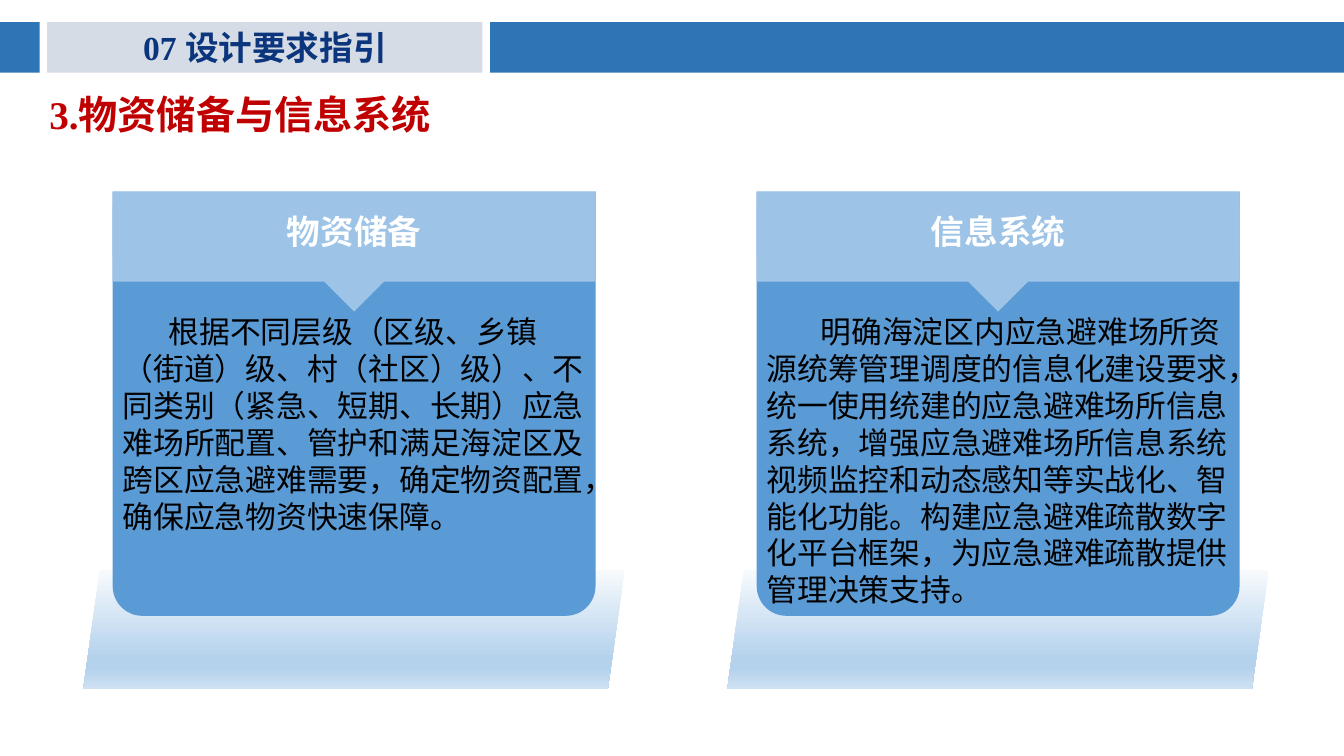
from lxml import etree
from pptx import Presentation
from pptx.dml.color import RGBColor
from pptx.enum.lang import MSO_LANGUAGE_ID
from pptx.enum.shapes import MSO_SHAPE
from pptx.enum.text import MSO_ANCHOR, MSO_AUTO_SIZE, PP_ALIGN
from pptx.oxml.ns import qn
from pptx.util import Cm, Pt

RECTANGLE = MSO_SHAPE.RECTANGLE
PARALLELOGRAM = MSO_SHAPE.PARALLELOGRAM
ROUNDED_TOP = MSO_SHAPE.ROUND_2_SAME_RECTANGLE
CALLOUT = MSO_SHAPE.DOWN_ARROW_CALLOUT
TOP, MIDDLE = MSO_ANCHOR.TOP, MSO_ANCHOR.MIDDLE
LEFT, CENTER, JUSTIFY = PP_ALIGN.LEFT, PP_ALIGN.CENTER, PP_ALIGN.JUSTIFY
NO_AUTOFIT = MSO_AUTO_SIZE.NONE
CHINESE = MSO_LANGUAGE_ID.SIMPLIFIED_CHINESE

FONT = "Times New Roman"
BAND, TAG, TAG_TEXT, HEADING = "2E75B6", "D6DCE5", "0B357C", "C00000"
CARD, CARD_HEAD, WHITE, BLACK = "5B9BD5", "9DC3E6", "FFFFFF", "000000"
PLINTH_STOPS = [(0, "F7FAFD"), (74, "B5D2EC"), (83, "B5D2EC"), (100, "CEE1F2")]

SLIDE_WIDTH, SLIDE_HEIGHT = 33.87, 19.05
CARD_WIDTH, CARD_HEIGHT = 12.17, 10.69
CARD_LEFT, CARD_TOP, CARD_STEP = 2.84, 4.83, 16.23

CARDS = [
    ("物资储备", 1.16,
     "根据不同层级（区级、乡镇（街道）级、村（社区）级）、不同类别（紧急、短期、长期）"
     "应急难场所配置、管护和满足海淀区及跨区应急避难需要，确定物资配置，确保应急物资快速保障。"),
    ("信息系统", 1.36,
     "明确海淀区内应急避难场所资源统筹管理调度的信息化建设要求，统一使用统建的应急避难场所信息系统，"
     "增强应急避难场所信息系统视频监控和动态感知等实战化、智能化功能。"
     "构建应急避难疏散数字化平台框架，为应急避难疏散提供管理决策支持。"),
]


def color(hex_code):
    return RGBColor.from_string(hex_code)


def add_block(shapes, kind, box, fill=None, adjustments=()):
    block = shapes.add_shape(kind, *map(Cm, box))
    block.shadow.inherit = False
    block.line.fill.background()
    for index, value in enumerate(adjustments):
        block.adjustments[index] = value
    if fill:
        block.fill.solid()
        block.fill.fore_color.rgb = color(fill)
    return block


def write(holder, text, size, hex_code, bold=False, align=LEFT, anchor=TOP, indent=0):
    frame = holder.text_frame
    frame.word_wrap = True
    frame.auto_size = NO_AUTOFIT
    frame.vertical_anchor = anchor
    paragraph = frame.paragraphs[0]
    paragraph.alignment = align
    if indent:
        properties = paragraph._p.get_or_add_pPr()
        properties.set("marL", "0")
        properties.set("indent", str(Cm(indent)))
    run = paragraph.add_run()
    run.text = text
    run.font.name = FONT
    run.font.size = Pt(size)
    run.font.bold = bold
    run.font.color.rgb = color(hex_code)
    run.font.language_id = CHINESE
    return paragraph


def fill_gradient(block, stops):
    block.fill.gradient()
    block.fill.gradient_angle = 270
    stop_list = block._element.spPr.find(qn("a:gradFill")).find(qn("a:gsLst"))
    for stop in list(stop_list):
        stop_list.remove(stop)
    for percent, hex_code in stops:
        stop = etree.SubElement(stop_list, qn("a:gs"), pos=str(percent * 1000))
        etree.SubElement(stop, qn("a:srgbClr"), val=hex_code)


def draw_header(slide, left, top, width, height):
    tag_left, tag_width, gap = left + 1.19, 10.97, 0.19
    band_left = tag_left + tag_width + gap
    tag = add_block(slide.shapes, RECTANGLE, (tag_left, top, tag_width, height), TAG)
    write(tag, "07 设计要求指引", 24, TAG_TEXT, True, CENTER, MIDDLE)
    add_block(slide.shapes, RECTANGLE, (left, top, tag_left - gap - left, height), BAND)
    add_block(slide.shapes, RECTANGLE, (band_left, top, left + width - band_left, height), BAND)


def draw_heading(slide, left, top, width, height):
    heading = slide.shapes.title
    heading.left, heading.top, heading.width, heading.height = map(Cm, (left, top, width, height))
    paragraph = write(heading, "3.物资储备与信息系统", 28, HEADING, True, JUSTIFY, indent=0.99)
    paragraph.line_spacing = Pt(28)
    paragraph.space_before = paragraph.space_after = Pt(6)


def draw_card(slide, left, top, width, height, name, indent, description):
    plinth = add_block(slide.shapes, PARALLELOGRAM,
                       (left - 0.74, top + 9.53, width + 1.47, 3), adjustments=[0.14])
    fill_gradient(plinth, PLINTH_STOPS)

    panel = slide.shapes.add_group_shape().shapes
    base = add_block(panel, ROUNDED_TOP, (left, top, width, height), CARD, [0.07, 0])
    base._element.spPr.find(qn("a:xfrm")).set("flipV", "1")
    add_block(panel, CALLOUT, (left, top, width, 3.02), CARD_HEAD, [0.5, 0.25, 0.25, 0.75])
    label = add_block(panel, RECTANGLE, (left, top + 0.36, width, 1.27), CARD_HEAD)
    write(label, name, 24, WHITE, True, CENTER, MIDDLE)

    text_top = 2.92
    body = slide.shapes.add_textbox(
        *map(Cm, (left, top + text_top, width, height - text_top)))
    write(body, description, 22, BLACK, indent=indent)


def main():
    deck = Presentation()
    deck.slide_width, deck.slide_height = Cm(SLIDE_WIDTH), Cm(SLIDE_HEIGHT)
    slide = deck.slides.add_slide(deck.slide_layouts.get_by_name("Title Only"))
    draw_header(slide, 0, 0.56, SLIDE_WIDTH, 1.27)
    draw_heading(slide, 0, 2.34, 26.26, 1.24)
    for index, card in enumerate(CARDS):
        draw_card(slide, CARD_LEFT + index * CARD_STEP, CARD_TOP, CARD_WIDTH, CARD_HEIGHT, *card)
    deck.save("out.pptx")


if __name__ == "__main__":
    main()
